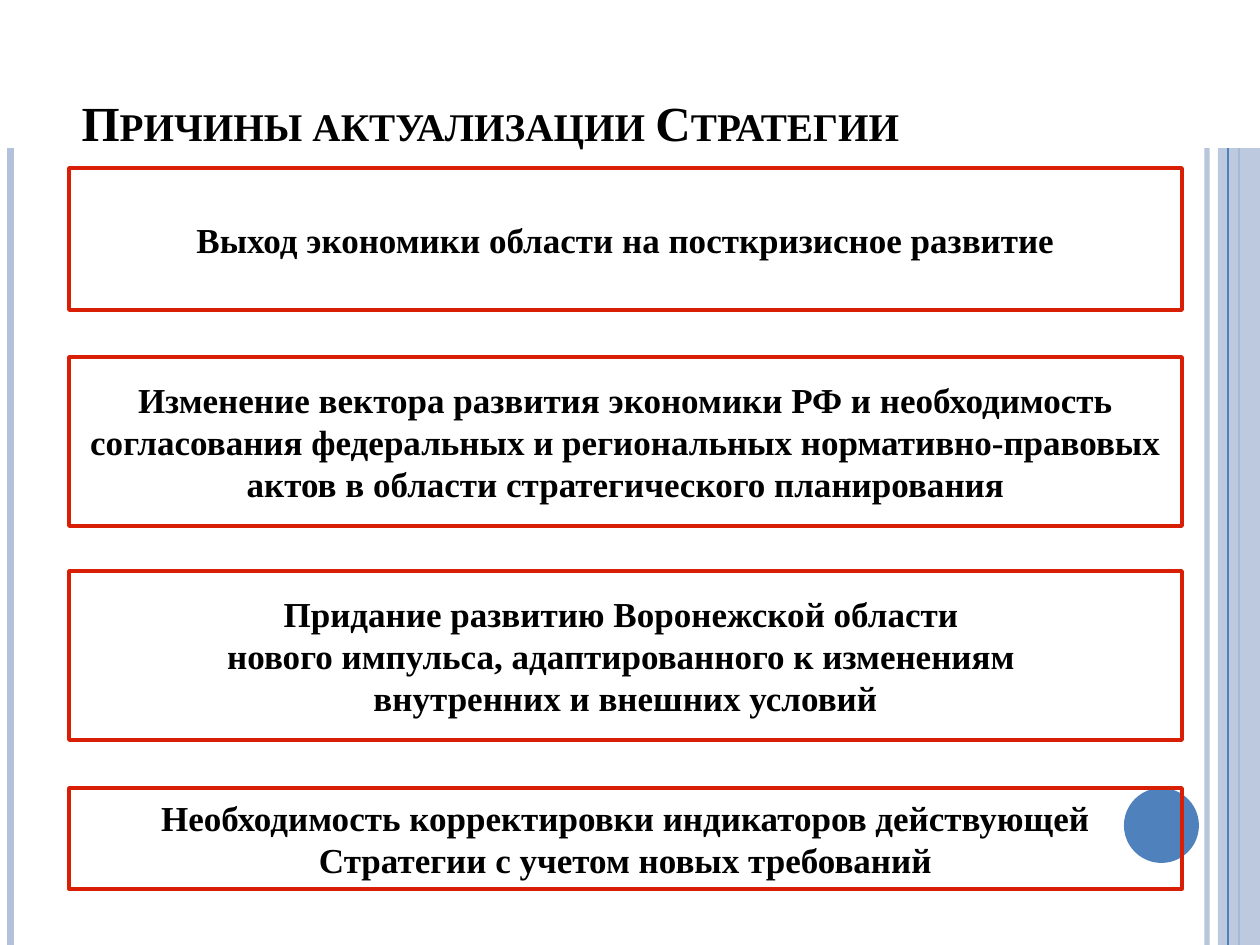
from lxml.etree import SubElement
from pptx import Presentation
from pptx.dml.color import RGBColor
from pptx.enum.shapes import MSO_CONNECTOR, MSO_SHAPE
from pptx.enum.text import MSO_ANCHOR, PP_ALIGN
from pptx.oxml.ns import qn
from pptx.util import Pt

PX = 914400 / 126
WIDTH, HEIGHT = 1260, 945
FONT = "Times New Roman"
BLACK = RGBColor(0x00, 0x00, 0x00)
WHITE = RGBColor(0xFF, 0xFF, 0xFF)
PALE = RGBColor(0xB3, 0xC1, 0xDB)
BLUE = RGBColor(0x4F, 0x81, 0xBD)
RED = RGBColor(0xD8, 0x1E, 0x05)

TITLE = "Причины актуализации Стратегии"
REASONS = [
    (168, 142, ["Выход экономики области на посткризисное развитие"]),
    (357, 169, ["Изменение вектора развития экономики РФ и необходимость "
                "согласования федеральных и региональных нормативно-правовых "
                "актов в области стратегического планирования"]),
    (571, 169, ["Придание развитию Воронежской области ",
                "нового импульса, адаптированного к изменениям ",
                "внутренних и внешних условий"]),
    (788, 101, ["Необходимость корректировки индикаторов действующей "
                "Стратегии с учетом новых требований"]),
]


def emu(*lengths):
    return [round(n * PX) for n in lengths]


def set_alpha(sp, percent):
    color = next(sp._element.spPr.iter(qn("a:srgbClr")))
    SubElement(color, qn("a:alpha")).set("val", str(percent * 1000))


def add_block(s, kind, box, fill=None):
    sp = s.shapes.add_shape(kind, *emu(*box))
    sp.shadow.inherit = False
    sp.line.fill.background()
    if fill is None:
        sp.fill.background()
    else:
        sp.fill.solid()
        sp.fill.fore_color.rgb = fill
    return sp


def add_stripe(s, x, top, height, color, weight):
    line = s.shapes.add_connector(
        MSO_CONNECTOR.STRAIGHT, *emu(x, top, x, top + height))
    line.line.color.rgb = color
    line.line.width = Pt(weight)
    SubElement(line._element.spPr, qn("a:effectLst"))
    return line


def format_paragraph(p, size):
    p.font.name = FONT
    p.font.size = Pt(size)
    p.font.bold = True
    p.font.color.rgb = BLACK


def add_frame(s, box):
    left, top, width, height = box
    right = left + width
    set_alpha(add_stripe(s, right - 53, top, height, PALE, 3), 93)
    add_stripe(s, left + 10.5, top, height, PALE, 4.5)
    add_stripe(s, right - 21, top, height, BLUE, 1.5)
    band = add_block(s, MSO_SHAPE.RECTANGLE, (right - 42, top, 42, height), PALE)
    set_alpha(band, 87)
    add_stripe(s, right - 32, top, height, BLUE, 0.75)
    add_block(s, MSO_SHAPE.OVAL, (right - 136, top + 788, 75, 75), BLUE)


def add_title(s, box):
    left, top, width, height = box
    add_block(s, MSO_SHAPE.RECTANGLE, (left, top, width, height - 10), WHITE)
    title = s.shapes.title
    s.shapes._spTree.append(title._element)
    title.left, title.top, title.width, title.height = emu(
        left + 69, top, width - 126, height)
    tf = title.text_frame
    tf.word_wrap = True
    tf.vertical_anchor = MSO_ANCHOR.BOTTOM
    p = tf.paragraphs[0]
    p.alignment = PP_ALIGN.LEFT
    format_paragraph(p, 28)
    r = p.add_run()
    r.text = TITLE
    r._r.get_or_add_rPr().set("cap", "small")


def add_reason(s, box, lines):
    sp = add_block(s, MSO_SHAPE.RECTANGLE, box)
    sp.line.color.rgb = RED
    sp.line.width = Pt(2)
    tf = sp.text_frame
    tf.word_wrap = True
    tf.vertical_anchor = MSO_ANCHOR.MIDDLE
    for i, text in enumerate(lines):
        p = tf.add_paragraph() if i else tf.paragraphs[0]
        p.alignment = PP_ALIGN.CENTER
        format_paragraph(p, 20)
        p.add_run().text = text


def add_reasons(s, box):
    left, top, width = box
    for y, height, lines in REASONS:
        add_reason(s, (left, top + y, width, height), lines)


def main():
    prs = Presentation()
    prs.slide_width, prs.slide_height = emu(WIDTH, HEIGHT)
    s = prs.slides.add_slide(prs.slide_layouts[5])
    add_frame(s, (0, 0, WIDTH, HEIGHT))
    add_title(s, (0, 0, WIDTH, 158))
    add_reasons(s, (69, 0, 1113))
    prs.save("out.pptx")


if __name__ == "__main__":
    main()
